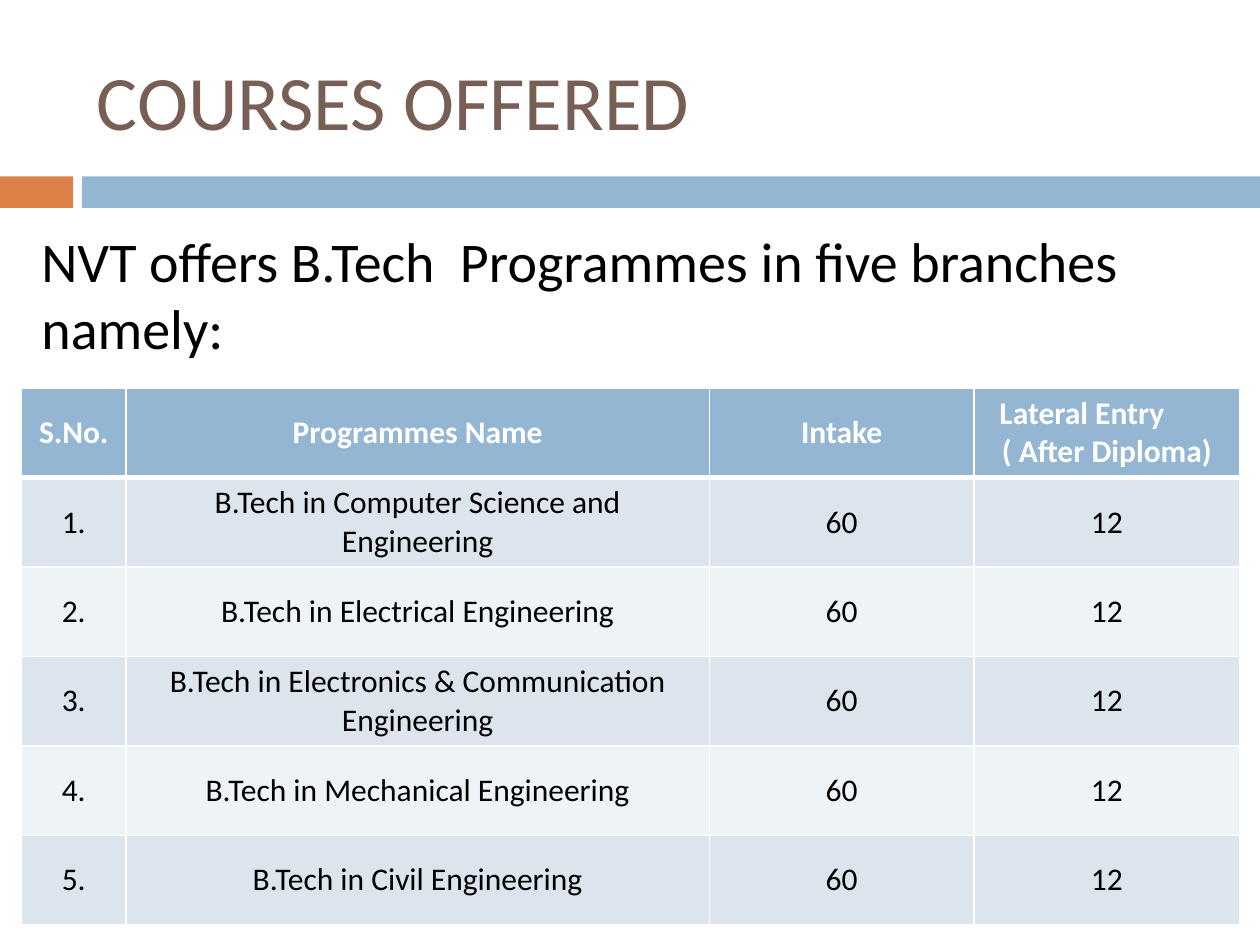
from lxml.etree import SubElement
from pptx import Presentation
from pptx.dml.color import RGBColor
from pptx.enum.shapes import MSO_SHAPE as Shape
from pptx.enum.text import MSO_ANCHOR as Anchor, PP_ALIGN as Align
from pptx.oxml.ns import qn
from pptx.util import Inches, Pt

# Content
TITLE = "COURSES OFFERED"
INTRO = "NVT offers B.Tech  Programmes in five branches namely:"
HEADERS = ["S.No.", "Programmes Name", "Intake", "Lateral Entry        ( After Diploma)"]
BRANCHES = [
    "Computer Science and Engineering",
    "Electrical Engineering",
    "Electronics & Communication Engineering",
    "Mechanical Engineering",
    "Civil Engineering",
]
INTAKE, LATERAL = "60", "12"
COLUMN_WIDTHS = [0.83, 4.63, 2.1, 2.11]
ROW_HEIGHT = 0.71

# Style
FONT = "Calibri"
BROWN = RGBColor(0x77, 0x5F, 0x55)
ORANGE = RGBColor(0xDD, 0x80, 0x47)
BLUE = RGBColor(0x94, 0xB6, 0xD2)
BANDS = [RGBColor(0xDC, 0xE5, 0xEE), RGBColor(0xEE, 0xF3, 0xF7)]
WHITE = RGBColor(0xFF, 0xFF, 0xFF)
BLACK = RGBColor(0, 0, 0)


def add_run(paragraph, text, size, color, bold=False):
    run = paragraph.add_run()
    run.text = text
    run.font.name = FONT
    run.font.size = Pt(size)
    run.font.bold = bold
    run.font.color.rgb = color


def add_bar(slide, left, width, color):
    bar = slide.shapes.add_shape(
        Shape.RECTANGLE, Inches(left), Inches(1.4), Inches(width), Inches(0.25))
    bar.shadow.inherit = False
    bar.fill.solid()
    bar.fill.fore_color.rgb = color
    bar.line.fill.background()


def add_text(slide, box, text, size, color, anchor):
    shape = slide.shapes.add_textbox(*map(Inches, box))
    frame = shape.text_frame
    frame.word_wrap = True
    frame.vertical_anchor = anchor
    add_run(frame.paragraphs[0], text, size, color)
    return frame.paragraphs[0]


def set_borders(cell, widths):
    properties = cell._tc.get_or_add_tcPr()
    for side, width in zip("LRTB", widths):
        line = SubElement(properties, qn(f"a:ln{side}"), w=str(Pt(width)))
        fill = SubElement(line, qn("a:solidFill"))
        SubElement(fill, qn("a:srgbClr"), val=str(WHITE))


def fill_cell(cell, text, background, color, bold, widths):
    set_borders(cell, widths)
    cell.fill.solid()
    cell.fill.fore_color.rgb = background
    cell.vertical_anchor = Anchor.MIDDLE
    paragraph = cell.text_frame.paragraphs[0]
    paragraph.alignment = Align.CENTER
    add_run(paragraph, text, 18, color, bold)


def add_course_table(slide):
    rows = [HEADERS] + [
        [f"{number}.", f"B.Tech in {branch}", INTAKE, LATERAL]
        for number, branch in enumerate(BRANCHES, 1)]
    table = slide.shapes.add_table(
        len(rows), len(HEADERS), Inches(0.17), Inches(3.08),
        Inches(sum(COLUMN_WIDTHS)), Inches(ROW_HEIGHT * len(rows))).table
    for column, width in zip(table.columns, COLUMN_WIDTHS):
        column.width = Inches(width)
    for r, texts in enumerate(rows):
        table.rows[r].height = Inches(ROW_HEIGHT)
        header = r == 0
        background = BLUE if header else BANDS[(r - 1) % 2]
        # A thick rule parts the header from the first row
        widths = (1, 1, 3 if r == 1 else 1, 3 if header else 1)
        for c, text in enumerate(texts):
            fill_cell(table.cell(r, c), text, background,
                      WHITE if header else BLACK, header, widths)


def main():
    presentation = Presentation()
    presentation.slide_width, presentation.slide_height = Inches(10), Inches(7.5)
    slide = presentation.slides.add_slide(presentation.slide_layouts[6])

    # Bars under the title
    add_bar(slide, 0, 0.58, ORANGE)
    add_bar(slide, 0.65, 9.35, BLUE)

    # Title and introduction
    add_text(slide, (0.67, 0.25, 8.92, 1.08), TITLE, 44, BROWN, Anchor.MIDDLE)
    intro = add_text(slide, (0.08, 1.75, 9.75, 5.15), INTRO, 32, BLACK, Anchor.TOP)
    intro.space_before = Pt(7)
    intro._p.get_or_add_pPr().set("marL", str(Inches(0.15)))

    # Courses
    add_course_table(slide)
    presentation.save("out.pptx")


if __name__ == "__main__":
    main()
